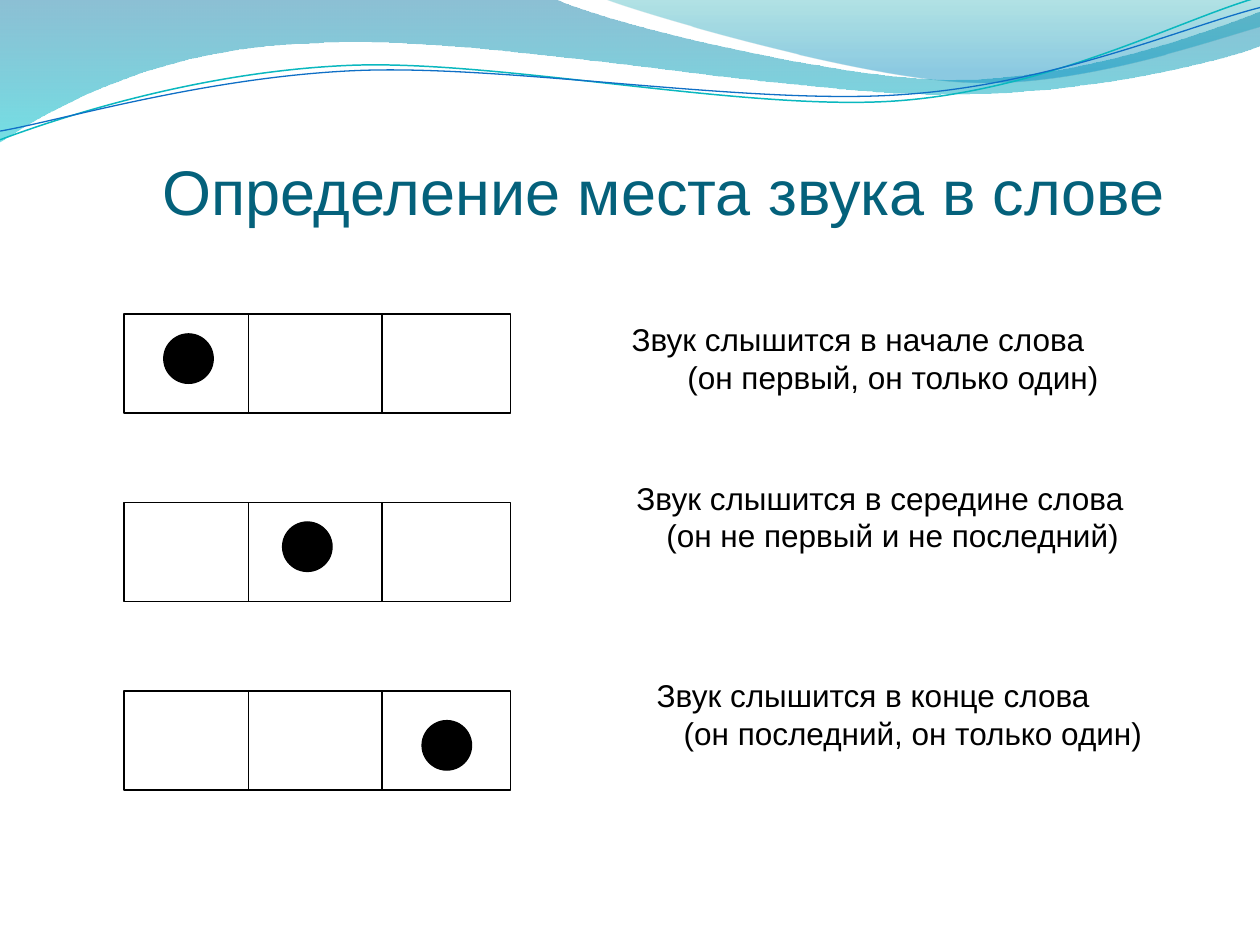
from collections import namedtuple
from dataclasses import dataclass

from lxml import etree
from pptx import Presentation
from pptx import util as u
from pptx.dml import color
from pptx.enum import shapes, text
from pptx.oxml import ns

Box = namedtuple("Box", "left top width height")


@dataclass(frozen=True)
class Theme:
    font: str = "Arial"
    title_size: float = 36
    body_size: float = 18
    title_color: str = "04617B"
    ink: str = "000000"
    line_width: float = 0.75


THEME = Theme()

BANDS = [
    {"start": (0, -0.5),
     "steps": [(316.8, -0.7), (342.7, 12.2, 478.1, 45.4, 545.8, 45.4),
               (614.2, 45.4, 689.8, 18.7, 720, 6.5), (720.7, 25.9),
               (707.8, 31.7, 626.4, 54.7, 537.1, 54),
               (447.8, 54, 275, 20.2, 185, 24.5),
               (92.9, 25.9, 33.1, 59.8, -0.7, 81.4)],
     "stops": [(0, "0074A1", 45), (1, "00C6CF", 55)]},
    {"start": (344.9, -0.7),
     "steps": [(366.5, 7.9, 491, 44.6, 553.7, 46.8),
               (616.3, 49.7, 691.9, 23, 720, 15.1), (720, 0)],
     "stops": [(0, "00A1A9", 30), (0.8, "008BBF", 45)]},
]

STRANDS = [
    {"start": (0, 79.9),
     "steps": [(34.6, 67, 113.8, 41, 199.4, 37.4),
               (284.4, 33.8, 427, 64.1, 513.4, 57.6),
               (599.8, 51.1, 675.4, 10.8, 718.6, -1.4)],
     "color": "0AB8BF", "width": 0.85},
    {"start": (0, 74.9),
     "steps": [(33.8, 69.1, 118.1, 43.9, 203.8, 40.3),
               (290.2, 36.7, 429.8, 60.5, 516.2, 54),
               (601.9, 48.2, 677.5, 15.1, 720, 4.3)],
     "color": "0F6FC6", "width": 0.75},
]

ROW_TOP, ROW_PITCH = 179.4, 107.7
ROWS = [
    {"dot": (22.8, 11.4), "caption": Box(342.7, 179.3, 334.8, 50.4), "indents": (11.1, 43),
     "lines": ("Звук слышится в начале слова", "(он первый, он только один)")},
    {"dot": (90.7, 11.2), "caption": Box(342.7, 270, 334.8, 50.4), "indents": (13.9, 31),
     "lines": ("Звук слышится в середине слова", "(он не первый и не последний)")},
    {"dot": (170.4, 17), "caption": Box(354.2, 383, 334.8, 50.4), "indents": (14, 29.4),
     "lines": ("Звук слышится в конце слова", "(он последний, он только один)")},
]


def rgb(value):
    return color.RGBColor.from_string(value)


def apply_format(target, values):
    for name, value in values.items():
        setattr(target, name, value)


def points(box):
    return [u.Pt(value) for value in box]


def set_line(shape, ink, width):
    shape.line.color.rgb = rgb(ink)
    shape.line.width = u.Pt(width)


def add_curve(slide, box, curve, close):
    steps = [list(zip(step[::2], step[1::2])) for step in curve["steps"]]
    vertices = [(u.Pt(box.left + x), u.Pt(box.top + y))
                for x, y in [curve["start"], *sum(steps, [])]]
    builder = slide.shapes.build_freeform(*vertices[0])
    builder.add_line_segments(vertices[1:], close=close)
    shape = builder.convert_to_shape()
    shape.shadow.inherit = False
    segments = iter(list(shape.element.spPr.iter(ns.qn("a:lnTo"))))
    for step in steps:
        segment = next(segments)
        if len(step) == 3:
            bezier = etree.Element(ns.qn("a:cubicBezTo"))
            segment.addprevious(bezier)
            for part in (segment, next(segments), next(segments)):
                bezier.append(part[0])
                part.getparent().remove(part)
    return shape


def add_waves(slide, box):
    for band in BANDS:
        shape = add_curve(slide, box, band, True)
        shape.line.fill.background()
        shape.fill.gradient()
        shape.fill.gradient_angle = 270
        for stop, (position, tint, _) in zip(shape.fill.gradient_stops, band["stops"]):
            stop.position = position
            stop.color.rgb = rgb(tint)
        colors = shape.element.spPr.iter(ns.qn("a:srgbClr"))
        for element, (_, _, opacity) in zip(colors, band["stops"]):
            etree.SubElement(element, ns.qn("a:alpha"), val=str(opacity * 1000))
    for strand in STRANDS:
        shape = add_curve(slide, box, strand, False)
        shape.fill.background()
        set_line(shape, strand["color"], strand["width"])


def add_text(slide, box, content, size, ink, anchor, alignment):
    frame = slide.shapes.add_textbox(*points(box)).text_frame
    apply_format(frame, {"word_wrap": True, "vertical_anchor": anchor})
    paragraph = frame.paragraphs[0]
    apply_format(paragraph, {"text": content, "alignment": alignment})
    for run in paragraph.runs:
        apply_format(run.font, {"name": THEME.font, "size": u.Pt(size)})
        run.font.color.rgb = rgb(ink)
    return paragraph


def add_title(slide, box):
    add_text(slide, box, "Определение места звука в слове", THEME.title_size,
             THEME.title_color, text.MSO_ANCHOR.BOTTOM, text.PP_ALIGN.CENTER)


def add_word_scheme(slide, box, dot):
    group = slide.shapes.add_group_shape()
    frame = group.shapes.add_shape(shapes.MSO_SHAPE.RECTANGLE, *points(box))
    frame.shadow.inherit = False
    frame.fill.background()
    set_line(frame, THEME.ink, THEME.line_width)
    for offset in (71.2, 147.5):
        x = box.left + offset
        divider = group.shapes.add_connector(
            shapes.MSO_CONNECTOR.STRAIGHT, *points((x, box.top, x, box.top + box.height)))
        set_line(divider, THEME.ink, THEME.line_width)
        etree.SubElement(divider.element.spPr, ns.qn("a:effectLst"))
    circle = slide.shapes.add_shape(
        shapes.MSO_SHAPE.OVAL, *points((box.left + dot[0], box.top + dot[1], 28.3, 28.3)))
    circle.shadow.inherit = False
    circle.fill.solid()
    circle.fill.fore_color.rgb = rgb(THEME.ink)
    set_line(circle, THEME.ink, THEME.line_width)


def add_caption(slide, box, lines, indents):
    paragraph = add_text(slide, box, "\v".join(lines), THEME.body_size, THEME.ink,
                         text.MSO_ANCHOR.TOP, text.PP_ALIGN.LEFT)
    first, second = indents
    properties = paragraph._p.get_or_add_pPr()
    for name, value in {"marL": second, "indent": first - second}.items():
        properties.set(name, str(u.Pt(value)))


def main():
    presentation = Presentation()
    apply_format(presentation, {"slide_width": u.Pt(720), "slide_height": u.Pt(540)})
    slide = presentation.slides.add_slide(presentation.slide_layouts[6])
    add_waves(slide, Box(0, 0, 720, 82))
    add_title(slide, Box(82.3, 31.7, 594, 102.2))
    for index, row in enumerate(ROWS):
        add_word_scheme(slide, Box(70.8, ROW_TOP + index * ROW_PITCH, 221, 56.7), row["dot"])
        add_caption(slide, row["caption"], row["lines"], row["indents"])
    presentation.save("out.pptx")


if __name__ == "__main__":
    main()
